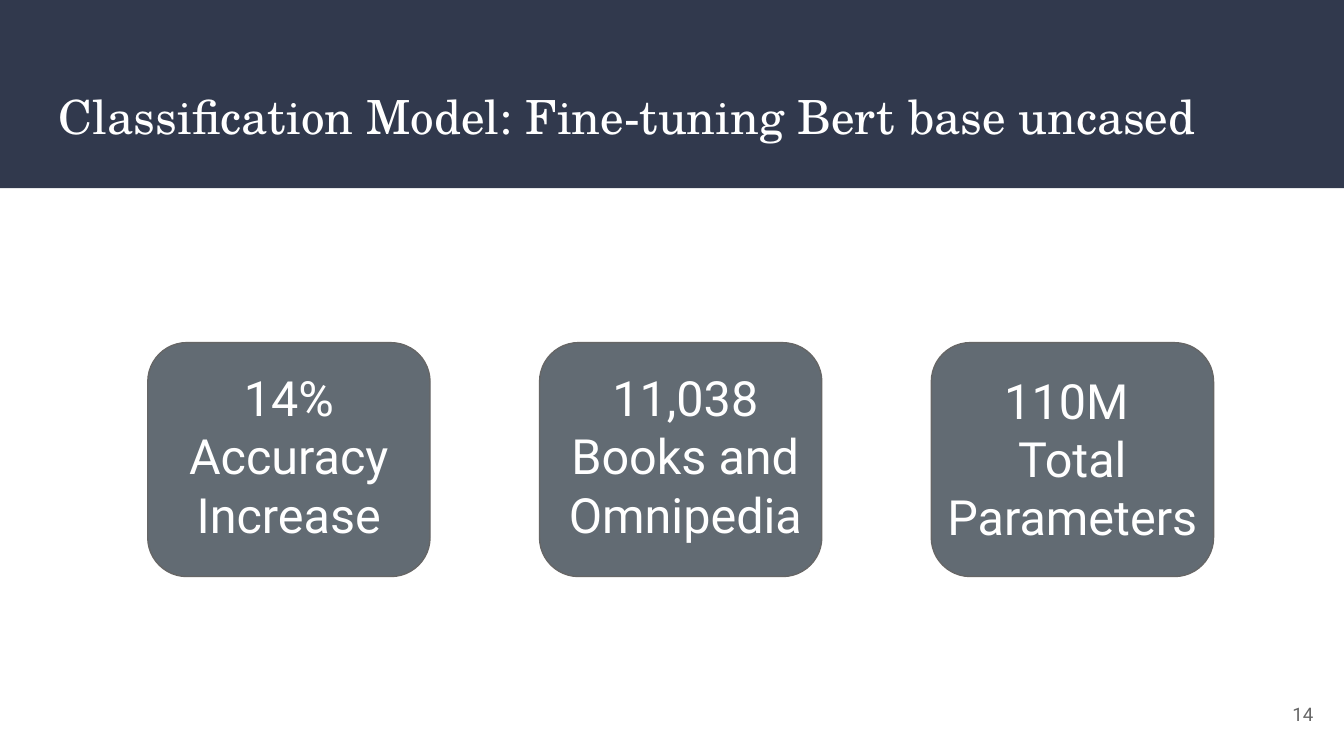
from pptx import Presentation
from pptx.dml.color import RGBColor
from pptx.enum.shapes import MSO_SHAPE as Shape
from pptx.enum.text import MSO_ANCHOR as Anchor, PP_ALIGN as Align
from pptx.util import Inches, Pt


def color(code):
    return RGBColor.from_string(code)


def write(frame, text, size=26, font="Roboto", ink="FFFFFF", align=Align.LEFT, anchor=Anchor.TOP):
    frame.word_wrap = True
    frame.vertical_anchor = anchor
    frame.margin_left = frame.margin_right = Inches(0.1)
    frame.margin_top = frame.margin_bottom = Inches(0.1)
    frame.text = text
    for par in frame.paragraphs:
        par.alignment = align
        for run in par.runs:
            run.font.size = Pt(size)
            run.font.name = font
            run.font.color.rgb = color(ink)


class Deck:
    """Holds the style and the current slide."""

    navy, slate, gray = "31394D", "626B73", "666666"
    serif = "TeX Gyre Schola"

    def __init__(self, width):
        self.file = Presentation()
        self.file.slide_width = Inches(width)
        self.file.slide_height = Inches(width * 9 / 16)
        self.slide = self.file.slides.add_slide(self.file.slide_layouts[6])

    def block(self, kind, box, fill, line=None):
        shape = self.slide.shapes.add_shape(kind, *map(Inches, box))
        shape.shadow.inherit = False
        shape.fill.solid()
        shape.fill.fore_color.rgb = color(fill)
        if line:
            shape.line.color.rgb = color(line)
            shape.line.width = Pt(0.75)
        else:
            shape.line.fill.background()
        return shape

    def band(self, width, height):
        self.block(Shape.RECTANGLE, (0, 0, width, height), self.navy)

    def card(self, left, top, width, height):
        shape = self.block(Shape.ROUNDED_RECTANGLE, (left, top, width, height), self.slate, self.gray)
        shape.adjustments[0] = 1 / 6

    def label(self, box, text, **style):
        frame = self.slide.shapes.add_textbox(*map(Inches, box)).text_frame
        write(frame, text, **style)


def main():
    deck = Deck(10)
    deck.band(10, 1.4)
    first, last = 1.1, 6.93
    facts = [
        ((1.17, 2.64, 1.96, 1.52), "14% Accuracy Increase"),
        ((4.09, 2.64, 2.02, 1.52), "11,038\nBooks and\nOmnipedia "),
        ((6.93, 2.66, 2.1, 1.52), "110M \nTotal\nParameters"),
    ]
    step = (last - first) / (len(facts) - 1)
    for i in reversed(range(len(facts))):
        deck.card(first + i * step, 2.55, 2.1, 1.74)
    deck.label((0.34, 0.55, 9.52, 0.68), "Classification Model: Fine-tuning Bert base uncased",
               size=25.2, font=deck.serif)
    deck.label((9.27, 5.1, 0.6, 0.43), "14", size=10, ink=deck.gray,
               align=Align.RIGHT, anchor=Anchor.MIDDLE)
    for box, text in facts:
        deck.label(box, text, align=Align.CENTER)
    deck.file.save("out.pptx")


if __name__ == "__main__":
    main()
